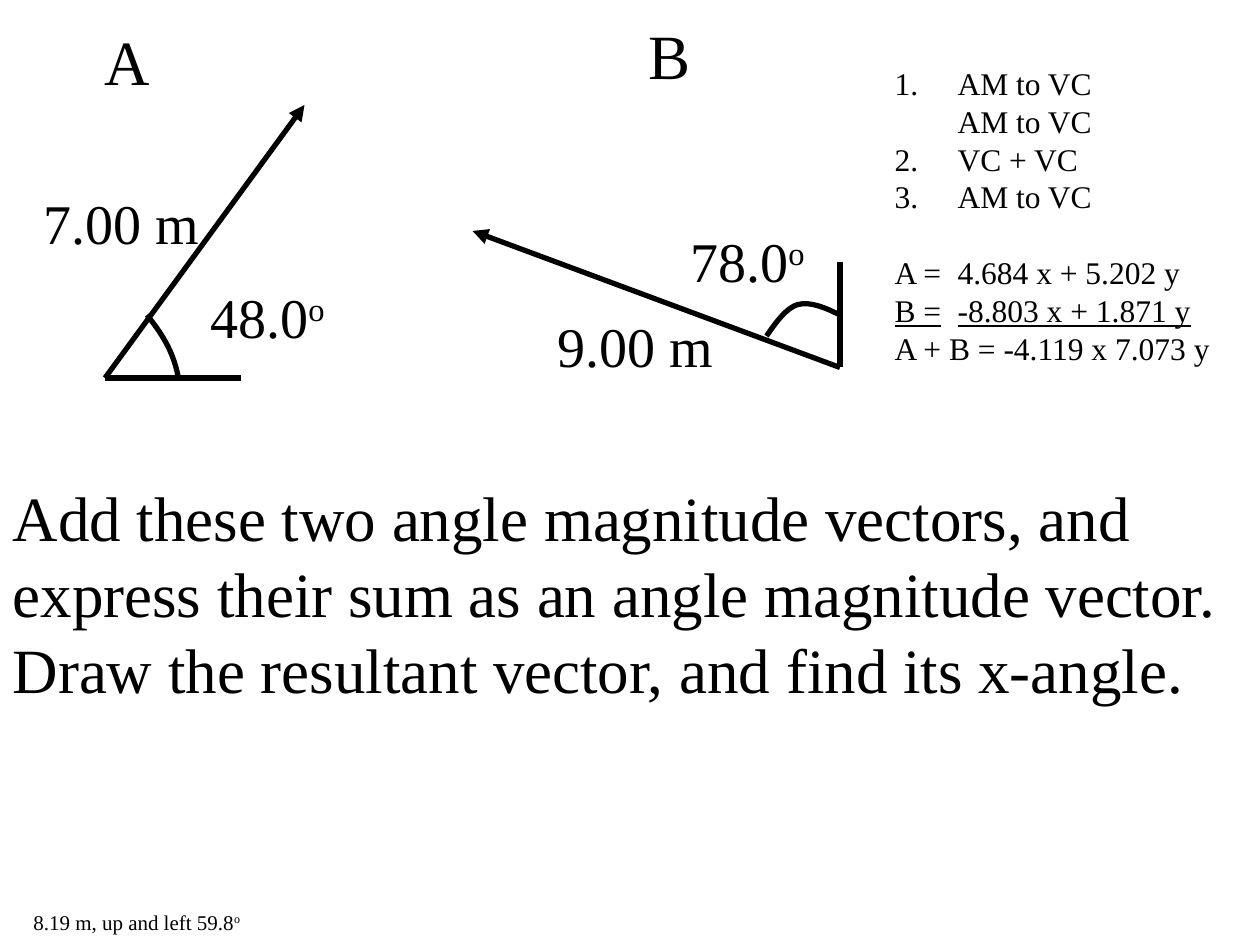
import pptx
import pptx.dml.color
import pptx.enum.shapes
import pptx.enum.text
import pptx.oxml
import pptx.oxml.ns
import pptx.util

COLORS = {"ink": "000000", "paper": "FFFFFF"}
FONT = "Times New Roman"
CELL = pptx.util.Inches(1) / 12

VECTOR_A = {
    "vertex": (10, 36), "tip": (29, 10), "reference": (23, 36),
    "arc": [(14, 30), (14.8, 31), (15.5, 32), (16, 33),
            (16.5, 34), (16.8, 35), (17, 36)],
    "labels": [("A", "", 36, (8.76, 1.56, 6.7, 8.4)),
               ("7.00 m", "", 32, (3, 17.4, 17.4, 7.7)),
               ("48.0", "o", 32, (18.84, 26.28, 13.4, 7.6))],
}
VECTOR_B = {
    "vertex": (35, 35), "tip": (0, 22), "reference": (35, 25),
    "arc": [(28, 32), (28.9, 30.7), (29.9, 29.3), (31, 29),
            (32.2, 28.7), (33.6, 29.3), (35, 30)],
    "labels": [("B", "", 36, (15.6, 0.96, 6.4, 8.4)),
               ("9.00 m", "", 32, (6.96, 29.04, 17.4, 7.7)),
               ("78.0", "o", 32, (19.56, 21, 13.4, 7.6))],
}
WORKING = [
    ("1.\tAM to VC", 0.24), ("\tAM to VC", 0.24),
    ("2.\tVC + VC", 0.3), ("3.\tAM to VC", 0.3),
    ("A =\t4.684 x + 5.202 y", 0.93), ("B =\t-8.803 x + 1.871 y", 0.87),
    ("A + B = -4.119 x 7.073 y", None),
]


def cells(*counts):
    return [round(count * CELL) for count in counts]


def ink():
    return pptx.dml.color.RGBColor.from_string(COLORS["ink"])


def style_font(paragraph, size):
    paragraph.font.name = FONT
    paragraph.font.size = pptx.util.Pt(size)
    paragraph.font.color.rgb = ink()


def style_line(shape):
    shape.line.color.rgb = ink()
    shape.line.width = pptx.util.Pt(3)


def move(shape, box):
    shape.left, shape.top, shape.width, shape.height = cells(*box)


def add_label(slide, text, superscript, size, box):
    frame = slide.shapes.add_textbox(*cells(*box)).text_frame
    frame.word_wrap = False
    paragraph = frame.paragraphs[0]
    paragraph.add_run().text = text
    if superscript:
        run = paragraph.add_run()
        run.text = superscript
        run._r.get_or_add_rPr().set("baseline", "30000")
    style_font(paragraph, size)


def add_line(slide, start, end, arrow=False):
    connector = slide.shapes.add_connector(
        pptx.enum.shapes.MSO_CONNECTOR.STRAIGHT, *cells(*start, *end))
    style_line(connector)
    if arrow:
        head = pptx.oxml.ns.qn("a:tailEnd")
        connector.line._get_or_add_ln().append(
            connector._element.makeelement(head, {"type": "triangle"}))
    properties = connector._element.spPr
    properties.append(properties.makeelement(pptx.oxml.ns.qn("a:effectLst"), {}))


def add_curve(slide, points):
    start, *others = [cells(*point) for point in points]
    builder = slide.shapes.build_freeform(*start, scale=1.0)
    builder.add_line_segments(others, close=False)
    shape = builder.convert_to_shape()
    shape.shadow.inherit = False
    shape.fill.background()
    style_line(shape)
    segments = list(shape._element.iter(pptx.oxml.ns.qn("a:lnTo")))
    for first in range(0, len(segments), 3):
        group = segments[first:first + 3]
        outline = group[0].getparent()
        curve = outline.makeelement(pptx.oxml.ns.qn("a:cubicBezTo"), {})
        outline.insert(outline.index(group[0]), curve)
        for segment in group:
            curve.append(segment[0])
            outline.remove(segment)


def add_vector(slide, vector, left, top):
    def place(point):
        return left + point[0], top + point[1]

    vertex = place(vector["vertex"])
    add_line(slide, vertex, place(vector["reference"]))
    add_line(slide, vertex, place(vector["tip"]), arrow=True)
    add_curve(slide, [place(point) for point in vector["arc"]])
    for text, superscript, size, box in vector["labels"]:
        add_label(slide, text, superscript, size, (*place(box), *box[2:]))


def fill_question(title, box):
    move(title, box)
    frame = title.text_frame
    frame.word_wrap = True
    frame.auto_size = pptx.enum.text.MSO_AUTO_SIZE.NONE
    frame.vertical_anchor = pptx.enum.text.MSO_ANCHOR.TOP
    frame.text = ("Add these two angle magnitude vectors, and express their sum "
                  "as an angle magnitude vector.  Draw the resultant vector, "
                  "and find its x-angle.")
    paragraph = frame.paragraphs[0]
    paragraph.alignment = pptx.enum.text.PP_ALIGN.LEFT
    style_font(paragraph, 36)


def fill_working(body, box):
    move(body, box)
    frame = body.text_frame
    frame.word_wrap = True
    frame.auto_size = pptx.enum.text.MSO_AUTO_SIZE.NONE
    for index, (text, tab) in enumerate(WORKING):
        paragraph = frame.paragraphs[0] if index == 0 else frame.add_paragraph()
        properties = paragraph._p.get_or_add_pPr()
        properties.set("marL", "0")
        properties.set("indent", "0")
        properties.append(properties.makeelement(pptx.oxml.ns.qn("a:buNone"), {}))
        if tab:
            tabs = properties.makeelement(pptx.oxml.ns.qn("a:tabLst"), {})
            tabs.append(tabs.makeelement(
                pptx.oxml.ns.qn("a:tab"),
                {"pos": str(pptx.util.Inches(tab)), "algn": "l"}))
            properties.append(tabs)
        paragraph.space_before = pptx.util.Pt(21.6 if text.startswith("A =") else 0)
        run = paragraph.add_run()
        run.text = text
        style_font(paragraph, 18)
        if text.startswith("B ="):
            run.font.underline = True


def main():
    presentation = pptx.Presentation()
    presentation.slide_width = pptx.util.Inches(10)
    presentation.slide_height = pptx.util.Inches(7.5)
    slide = presentation.slides.add_slide(presentation.slide_layouts[1])
    background = slide.background.fill
    background.solid()
    background.fore_color.rgb = pptx.dml.color.RGBColor.from_string(COLORS["paper"])

    fill_question(slide.shapes.title, (0, 45, 120, 23))
    fill_working(slide.placeholders[1], (84, 5.5, 36, 30))
    add_vector(slide, VECTOR_A, 0, 0)
    add_vector(slide, VECTOR_B, 45, 0)
    add_label(slide, "8.19 m, up and left 59.8", "o", 12, (2, 86, 22.4, 3.6))
    presentation.save("out.pptx")


if __name__ == "__main__":
    main()
